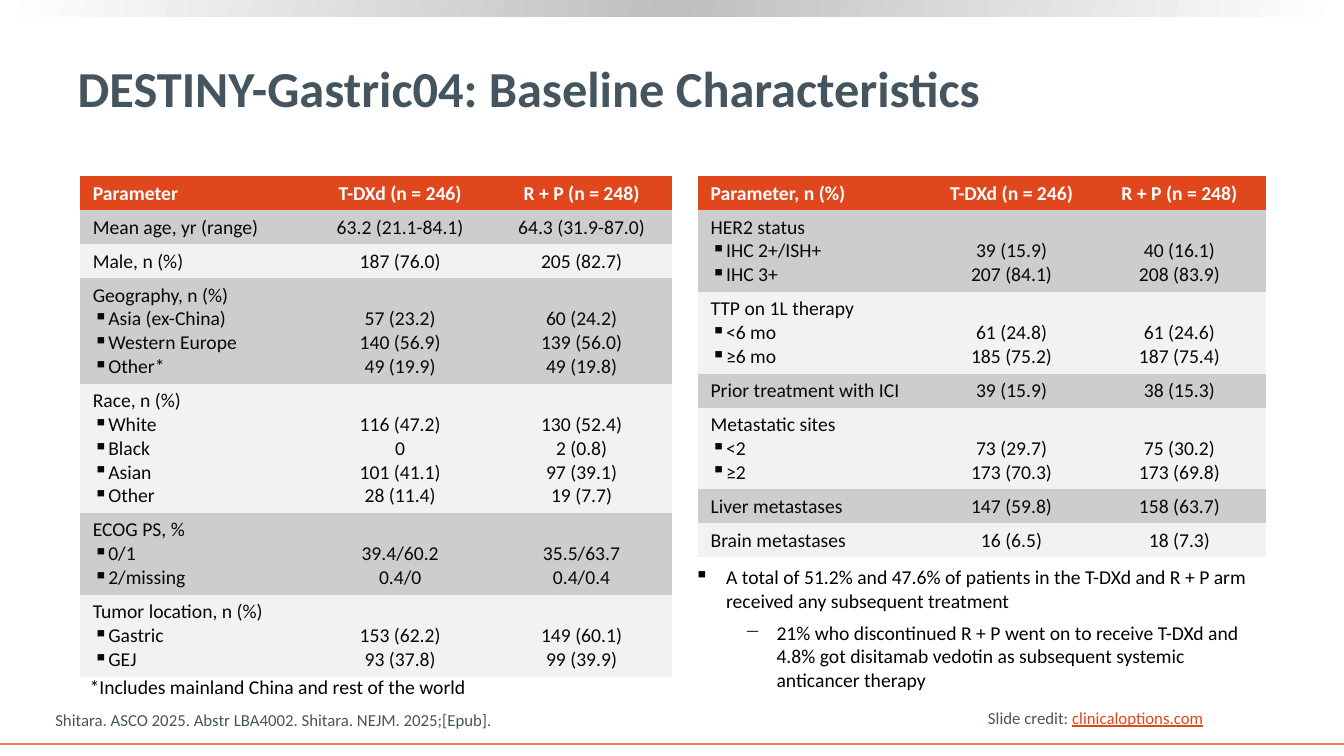
from copy import deepcopy
from dataclasses import dataclass

from lxml.etree import SubElement
from pptx import Presentation
from pptx.dml.color import RGBColor
from pptx.enum.shapes import MSO_CONNECTOR, MSO_SHAPE
from pptx.enum.text import MSO_ANCHOR, MSO_AUTO_SIZE, PP_ALIGN
from pptx.oxml.ns import qn
from pptx.util import Inches, Pt

WIDTH, HEIGHT = Inches(13.33), Inches(7.5)
FONT = "Calibri"
SLATE, ORANGE, CORAL = "455560", "E1471D", "F47D55"
WHITE, BLACK, INK = "FFFFFF", "000000", "07080A"
BANDS = ("F2F2F2", "CDCDCF")
SILVER = "BFBFBF"
PLAIN_GRID = "{2D5ABB26-0587-4C30-8999-92F81FD0307C}"
LINE, PAD = 3.11, 1.33  # row height per text line and per row, % of slide height


@dataclass(frozen=True)
class Box:
    """A frame in percent of the slide's width and height."""
    left: float
    top: float
    width: float
    height: float

    def frame(self) -> tuple:
        return wide(self.left), high(self.top), wide(self.width), high(self.height)


@dataclass(frozen=True)
class Row:
    """A label with optional sub-items, and the values of both arms."""
    label: str
    items: tuple
    first: tuple
    second: tuple


@dataclass(frozen=True)
class Grid:
    left: float
    cols: tuple
    head: str
    rows: tuple


@dataclass(frozen=True)
class Note:
    text: str
    level: int
    glyph: str
    indent: float


LEFT = Grid(5.93, (17.1, 13.5, 13.5), "Parameter", (
    Row("Mean age, yr (range)", (), ("63.2 (21.1-84.1)",), ("64.3 (31.9-87.0)",)),
    Row("Male, n (%)", (), ("187 (76.0)",), ("205 (82.7)",)),
    Row("Geography, n (%)", ("Asia (ex-China)", "Western Europe", "Other*"),
        ("57 (23.2)", "140 (56.9)", "49 (19.9)"),
        ("60 (24.2)", "139 (56.0)", "49 (19.8)")),
    Row("Race, n (%)", ("White", "Black", "Asian", "Other"),
        ("116 (47.2)", "0", "101 (41.1)", "28 (11.4)"),
        ("130 (52.4)", "2 (0.8)", "97 (39.1)", "19 (7.7)")),
    Row("ECOG PS, %", ("0/1", "2/missing"),
        ("39.4/60.2", "0.4/0"), ("35.5/63.7", "0.4/0.4")),
    Row("Tumor location, n (%)", ("Gastric", "GEJ"),
        ("153 (62.2)", "93 (37.8)"), ("149 (60.1)", "99 (39.9)")),
))
RIGHT = Grid(51.9, (17.33, 12.08, 12.9), "Parameter, n (%)", (
    Row("HER2 status", ("IHC 2+/ISH+", "IHC 3+"),
        ("39 (15.9)", "207 (84.1)"), ("40 (16.1)", "208 (83.9)")),
    Row("TTP on 1L therapy", ("<6 mo", "≥6 mo"),
        ("61 (24.8)", "185 (75.2)"), ("61 (24.6)", "187 (75.4)")),
    Row("Prior treatment with ICI", (), ("39 (15.9)",), ("38 (15.3)",)),
    Row("Metastatic sites", ("<2", "≥2"),
        ("73 (29.7)", "173 (70.3)"), ("75 (30.2)", "173 (69.8)")),
    Row("Liver metastases", (), ("147 (59.8)",), ("158 (63.7)",)),
    Row("Brain metastases", (), ("16 (6.5)",), ("18 (7.3)",)),
))
NOTES = (
    Note("A total of 51.2% and 47.6% of patients in the T-DXd and R + P arm "
         "received any subsequent treatment", 0, "▪", 2.35),
    Note("21% who discontinued R + P went on to receive T-DXd and 4.8% got "
         "disitamab vedotin as subsequent systemic anticancer therapy", 1, "─", 6.1),
)


def wide(share: float) -> int:
    return round(WIDTH * share / 100)


def high(share: float) -> int:
    return round(HEIGHT * share / 100)


def hue(code: str) -> RGBColor:
    return RGBColor.from_string(code)


def write(para, text: str, size: float, color: str, bold: bool = False):
    run = para.add_run()
    run.text = text
    run.font.name, run.font.size, run.font.bold = FONT, Pt(size), bold
    run.font.color.rgb = hue(color)
    return run


def mark(para, glyph: str, indent: float, hang: float) -> None:
    """Give a paragraph a bullet with a hanging indent."""
    props = para._p.get_or_add_pPr()
    props.set("marL", str(wide(indent)))
    props.set("indent", str(-wide(hang)))
    SubElement(props, qn("a:buChar")).set("char", glyph)


def next_para(frame, index: int):
    return frame.add_paragraph() if index else frame.paragraphs[0]


def add_box(slide, box: Box, wrap: bool):
    frame = slide.shapes.add_textbox(*box.frame()).text_frame
    frame.word_wrap = wrap
    return frame


def fill_cell(cell, lines: tuple, back: str, color: str, bold: bool, label: bool) -> None:
    """Write one line per paragraph; in a label cell, bullet all but the first."""
    cell.fill.solid()
    cell.fill.fore_color.rgb = hue(back)
    cell.margin_left = cell.margin_right = Inches(0.13)
    cell.margin_top = cell.margin_bottom = Inches(0.05)
    cell.vertical_anchor = MSO_ANCHOR.MIDDLE if label else MSO_ANCHOR.BOTTOM
    for index, text in enumerate(lines):
        para = next_para(cell.text_frame, index)
        if not label:
            para.alignment = PP_ALIGN.CENTER
        elif index:
            mark(para, "▪", 0.98, 0.92)
        write(para, text, 14, color, bold)


def add_grid(slide, grid: Grid) -> None:
    head = Row(grid.head, (), ("T-DXd (n = 246)",), ("R + P (n = 248)",))
    rows = (head, *grid.rows)
    tall = [PAD + LINE * (1 + len(row.items)) for row in rows]
    box = Box(grid.left, 23.33, sum(grid.cols), sum(tall))
    table = slide.shapes.add_table(len(rows), len(grid.cols), *box.frame()).table
    table.first_row = table.horz_banding = False
    table._tbl.tblPr.find(qn("a:tableStyleId")).text = PLAIN_GRID
    for col, share in zip(table.columns, grid.cols):
        col.width = wide(share)
    for index, row in enumerate(rows):
        table.rows[index].height = high(tall[index])
        back, color = (BANDS[index % 2], INK) if index else (ORANGE, WHITE)
        for col, lines in enumerate(((row.label, *row.items), row.first, row.second)):
            fill_cell(table.cell(index, col), lines, back, color, index == 0, col == 0)


def add_trim(slide) -> None:
    """Draw the shaded bar at the top and the rule at the foot."""
    bar = slide.shapes.add_shape(MSO_SHAPE.RECTANGLE, *Box(0, 0, 100, 2.13).frame())
    bar.shadow.inherit = False
    bar.line.fill.background()
    bar.fill.gradient()
    bar.fill.gradient_angle = 170
    start, middle = bar.fill.gradient_stops
    start.color.rgb, middle.color.rgb = hue(WHITE), hue(SILVER)
    middle.position = 0.5
    stops = bar._element.spPr.find(".//" + qn("a:gsLst"))
    end = deepcopy(stops[0])
    end.set("pos", "100000")
    stops.append(end)
    rule = slide.shapes.add_connector(
        MSO_CONNECTOR.STRAIGHT, 0, high(98.4), WIDTH, high(98.4))
    rule.line.color.rgb, rule.line.width = hue(CORAL), Pt(1.5)
    SubElement(rule._element.spPr, qn("a:effectLst"))


def add_title(slide) -> None:
    title = slide.shapes.title
    title.left, title.top, title.width, title.height = Box(5.03, 3.47, 91.37, 16.13).frame()
    frame = title.text_frame
    frame.auto_size, frame.vertical_anchor = MSO_AUTO_SIZE.NONE, MSO_ANCHOR.MIDDLE
    para = frame.paragraphs[0]
    para.alignment = PP_ALIGN.LEFT
    write(para, "DESTINY-Gastric04: Baseline Characteristics", 36, SLATE, True)


def add_notes(slide) -> None:
    frame = add_box(slide, Box(50.94, 74.13, 44.11, 18.13), True)
    for index, note in enumerate(NOTES):
        para = next_para(frame, index)
        para.level = note.level
        mark(para, note.glyph, note.indent, 2.35)
        if index:
            para.space_before = Pt(6)
        write(para, note.text, 14, BLACK)


def add_foot(slide) -> None:
    para = add_box(slide, Box(5.93, 88.67, 29.78, 4.53), False).paragraphs[0]
    write(para, "*Includes mainland China and rest of the world", 14, BLACK)
    source = add_box(slide, Box(3.38, 93.2, 64.44, 4), True)
    source.vertical_anchor = MSO_ANCHOR.BOTTOM
    write(source.paragraphs[0],
          "Shitara. ASCO 2025. Abstr LBA4002. Shitara. NEJM. 2025;[Epub].", 12, SLATE)
    para = add_box(slide, Box(72.77, 92.93, 17.7, 4), False).paragraphs[0]
    write(para, "Slide credit: ", 12, SLATE)
    write(para, "clinicaloptions.com", 12, ORANGE).font.underline = True


def main() -> None:
    deck = Presentation()
    deck.slide_width, deck.slide_height = WIDTH, HEIGHT
    slide = deck.slides.add_slide(deck.slide_layouts[5])
    add_trim(slide)
    add_title(slide)
    for grid in (LEFT, RIGHT):
        add_grid(slide, grid)
    add_notes(slide)
    add_foot(slide)
    deck.save("out.pptx")


if __name__ == "__main__":
    main()
